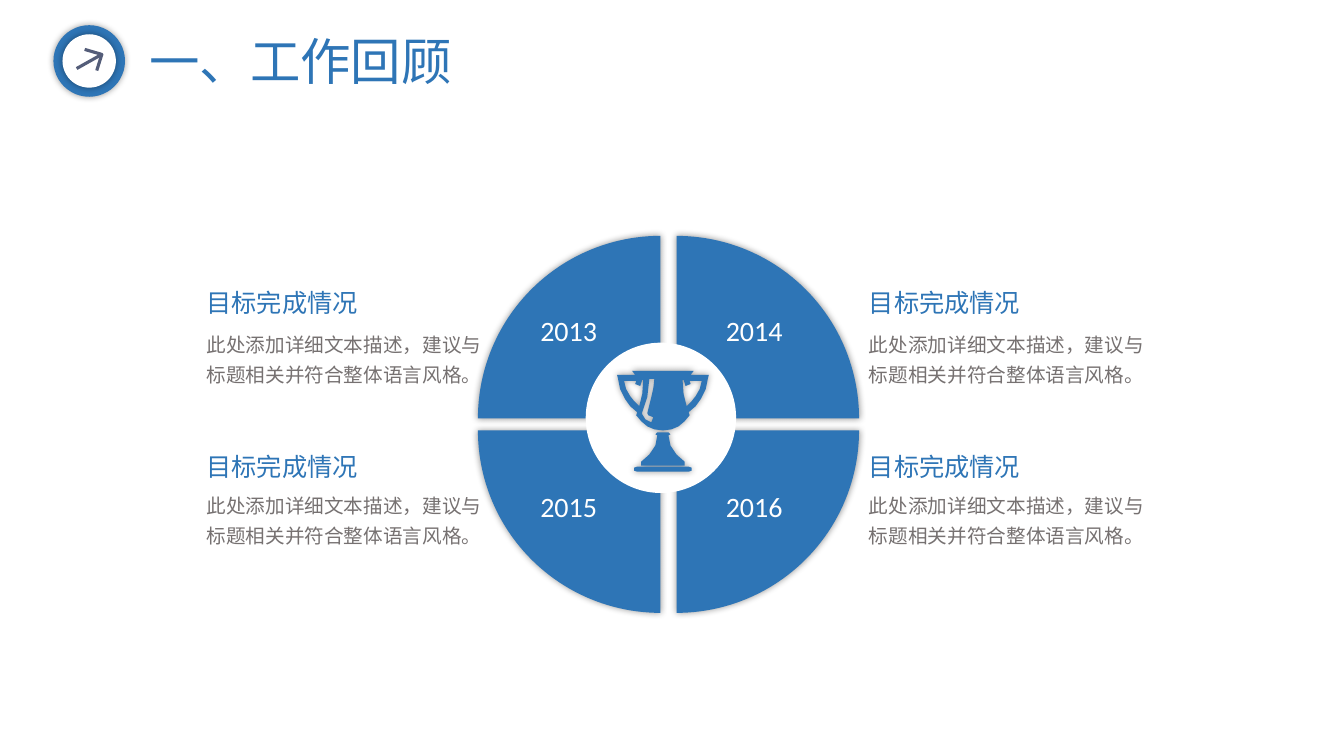
from lxml.etree import SubElement
from pptx import Presentation
from pptx.dml.color import RGBColor
from pptx.enum.shapes import MSO_CONNECTOR, MSO_SHAPE
from pptx.enum.text import MSO_ANCHOR, MSO_AUTO_SIZE, PP_ALIGN
from pptx.oxml.ns import qn
from pptx.util import Inches, Pt

COLORS = {"blue": "2E75B6", "white": "FFFFFF", "slate": "545D79", "gray": "767171", "black": "000000"}
HEAD_FONT, BODY_FONT, YEAR_FONT = "Noto Sans CJK JP", "Noto Sans CJK SC", "Calibri"


def set_text(sp, text, size, font, color="blue", wrap=True, spacing=None):
    tf = sp.text_frame
    tf.word_wrap = wrap
    tf.auto_size = MSO_AUTO_SIZE.SHAPE_TO_FIT_TEXT
    tf.vertical_anchor = MSO_ANCHOR.TOP
    p = tf.paragraphs[0]
    p.alignment = PP_ALIGN.LEFT
    if spacing:
        p.line_spacing = spacing
    r = p.add_run()
    r.text = text
    r.font.size = Pt(size)
    r.font.name = font
    r.font.color.rgb = RGBColor.from_string(COLORS[color])
    SubElement(r._r.get_or_add_rPr(), qn("a:ea"), typeface=font)


def style(sp, fill, shadow=True):
    sp.fill.solid()
    sp.fill.fore_color.rgb = RGBColor.from_string(COLORS[fill])
    sp.line.fill.background()
    sp.shadow.inherit = False
    if shadow:
        effects = sp._element.spPr.find(qn("a:effectLst"))
        outer = SubElement(effects, qn("a:outerShdw"), blurRad=str(Pt(5)), dist="0", dir="0",
                           algn="ctr", rotWithShape="0")
        clr = SubElement(outer, qn("a:srgbClr"), val=COLORS["black"])
        SubElement(clr, qn("a:alpha"), val="40000")


prs = Presentation()
prs.slide_width, prs.slide_height = Inches(13.33), Inches(7.5)
slide = prs.slides.add_slide(prs.slide_layouts[5])
shapes = slide.shapes

title = shapes.title
title.left, title.top, title.width, title.height = Inches(1.38), Inches(0.25), Inches(5.68), Inches(0.7)
set_text(title, "一、工作回顾", 36, HEAD_FONT)

for offset, size, fill in ((0, 0.71, "blue"), (0.09, 0.53, "white")):
    sp = shapes.add_shape(MSO_SHAPE.OVAL, Inches(0.53 + offset), Inches(0.25 + offset),
                          Inches(size), Inches(size))
    style(sp, fill)

fb = shapes.build_freeform(Inches(0.84), Inches(0.49))
fb.add_line_segments([(Inches(1.01), Inches(0.54)), (Inches(0.96), Inches(0.7))], close=False)
arrow_tip = fb.convert_to_shape()
arrow_tip.fill.background()
arrow_tip.shadow.inherit = False
arrow_shaft = shapes.add_connector(MSO_CONNECTOR.STRAIGHT, Inches(0.76), Inches(0.68),
                                   Inches(1.01), Inches(0.54))
SubElement(arrow_shaft._element.spPr, qn("a:effectLst"))
for sp in (arrow_tip, arrow_shaft):
    sp.line.color.rgb = RGBColor.from_string(COLORS["slate"])
    sp.line.width = Pt(2.25)

for left in (1.95, 8.52):
    for head_top, body_top in ((2.8, 3.18), (4.43, 4.78)):
        body = shapes.add_textbox(Inches(left), Inches(body_top), Inches(3), Inches(0.71))
        set_text(body, "此处添加详细文本描述，建议与标题相关并符合整体语言风格。", 14, BODY_FONT,
                 color="gray", spacing=1.3)
        head = shapes.add_textbox(Inches(left), Inches(head_top), Inches(1.7), Inches(0.4))
        set_text(head, "目标完成情况", 18, HEAD_FONT, wrap=False)

for left, top, start in ((4.74, 2.46, 90), (4.9, 2.46, 0), (4.74, 2.34, 180), (4.9, 2.34, 270)):
    sp = shapes.add_shape(MSO_SHAPE.PIE, Inches(left), Inches(top), Inches(3.62), Inches(3.62))
    sp.adjustments[0] = start * 0.6
    sp.adjustments[1] = (start + 90) % 360 * 0.6
    style(sp, "blue")

hub = shapes.add_shape(MSO_SHAPE.OVAL, Inches(5.83), Inches(3.42), Inches(1.45), Inches(1.45))
style(hub, "white", shadow=False)
hub.line.color.rgb = RGBColor.from_string(COLORS["white"])
hub.line.width = Pt(3)

for i, year in enumerate(("2013", "2014", "2015", "2016")):
    row, col = divmod(i, 2)
    sp = shapes.add_textbox(Inches(5.26 + 1.84 * col), Inches(3.06 + 1.75 * row),
                            Inches(0.82), Inches(0.43))
    set_text(sp, year, 20, YEAR_FONT, color="white", wrap=False)

bowl = [(6.27, 3.68), (6.3, 3.72), (6.12, 3.72), (6.13, 3.76), (6.15, 3.86), (6.2, 3.96),
        (6.25, 4.03), (6.32, 4.09), (6.31, 4.12), (6.36, 4.18), (6.42, 4.23), (6.49, 4.26), (6.57, 4.27)]
stem = [(6.57, 4.62), (6.36, 4.62), (6.36, 4.58), (6.44, 4.51), (6.5, 4.42), (6.52, 4.32),
        (6.5, 4.31), (6.52, 4.29)]
base = [(6.57, 4.63), (6.32, 4.63), (6.29, 4.64), (6.29, 4.67), (6.32, 4.68), (6.57, 4.68)]
handle = [(6.35, 3.83), (6.3, 3.81), (6.31, 3.78), (6.19, 3.78), (6.21, 3.86), (6.25, 3.93),
          (6.29, 3.98), (6.34, 4.03), (6.37, 3.91), (6.38, 3.77), (6.37, 3.77)]
shine = [(6.49, 3.76), (6.48, 3.85), (6.46, 3.94), (6.42, 4.1), (6.43, 4.12), (6.48, 4.14),
         (6.46, 4.19), (6.4, 4.16), (6.37, 4.11), (6.37, 4.09), (6.42, 3.94), (6.44, 3.76)]
MIRROR = 13.15
contours = [half + [(MIRROR - x, y) for x, y in reversed(half)] for half in (bowl, stem, base)]
contours += [handle, [(MIRROR - x, y) for x, y in handle], shine]

fb = None
for contour in contours:
    points = [(Inches(x), Inches(y)) for x, y in contour]
    if fb is None:
        fb = shapes.build_freeform(*points[0])
    else:
        fb.move_to(*points[0])
    fb.add_line_segments(points[1:], close=True)
trophy = fb.convert_to_shape()
style(trophy, "blue")

prs.save("out.pptx")
